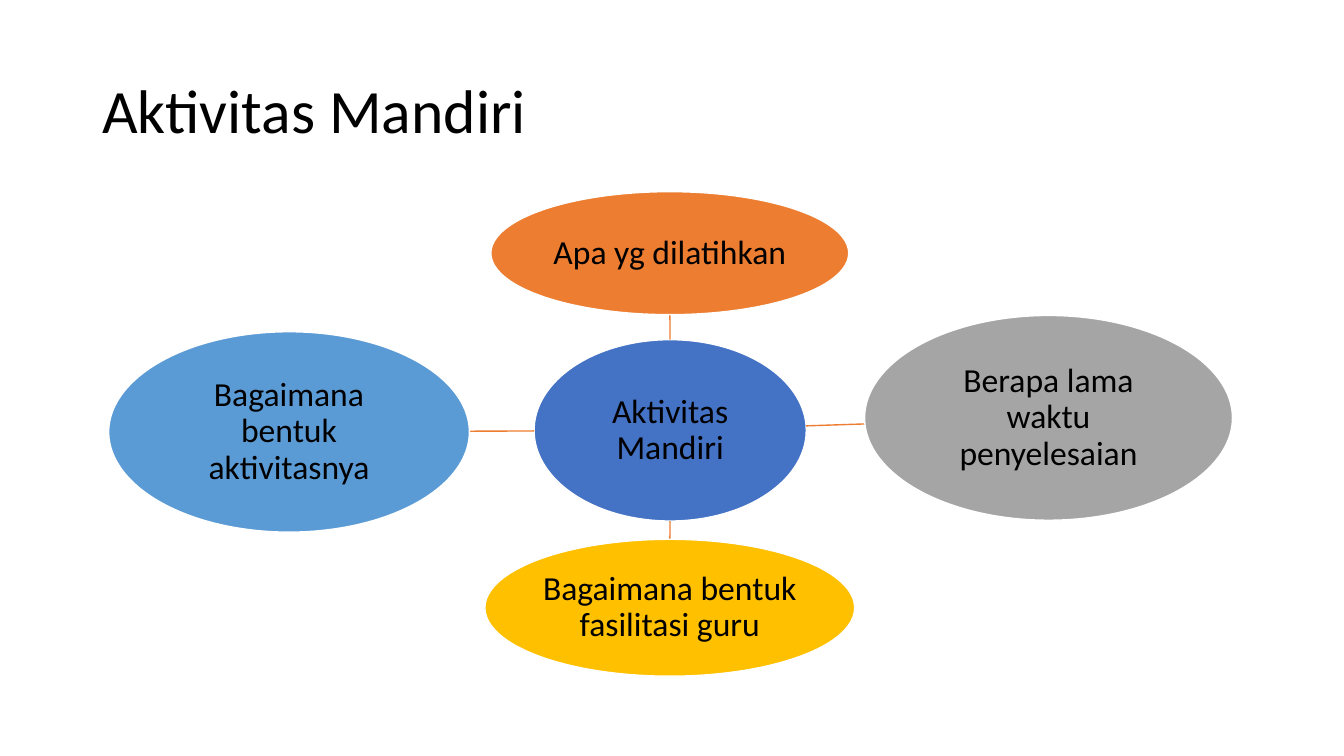
import math

import pptx
import pptx.dml.color
import pptx.enum.shapes
import pptx.enum.text
import pptx.oxml.ns
import pptx.util
from lxml import etree

Cm = pptx.util.Cm
Pt = pptx.util.Pt
ANCHOR = pptx.enum.text.MSO_ANCHOR
ALIGN = pptx.enum.text.PP_ALIGN

BLACK, WHITE, SPOKE = "000000", "FFFFFF", "ED7D31"

# Bubbles: wording, fill, (left, top, width, height) in cm
HUB = ("Aktivitas Mandiri", "4472C4", (13.46, 8.56, 6.86, 4.57))
QUESTIONS = [
    ("Apa yg dilatihkan", "ED7D31", (12.37, 4.83, 9.02, 3.1)),
    ("Berapa lama waktu penyelesaian", "A5A5A5", (21.79, 7.95, 9.27, 5.16)),
    ("Bagaimana bentuk fasilitasi guru", "FFC000", (12.22, 13.59, 9.32, 3.45)),
    ("Bagaimana bentuk aktivitasnya", "5B9BD5", (2.74, 8.36, 9.09, 5.05)),
]


def color(hex_value):
    return pptx.dml.color.RGBColor.from_string(hex_value)


def apply_format(target, values):
    for name, value in values.items():
        setattr(target, name, value)


def write_text(frame, wording, size, align, margins):
    apply_format(frame, {"word_wrap": True, "vertical_anchor": ANCHOR.MIDDLE, **margins})
    paragraph = frame.paragraphs[0]
    apply_format(paragraph, {"text": wording, "alignment": align, "line_spacing": 0.9})
    apply_format(paragraph.font, {"name": "Calibri", "size": Pt(size)})
    paragraph.font.color.rgb = color(BLACK)


def add_title(slide, wording):
    title = slide.shapes.add_textbox(Cm(2.33), Cm(1.02), Cm(29.21), Cm(3.68))
    write_text(title.text_frame, wording, 44, ALIGN.LEFT, {})


def add_bubble(slide, wording, fill, box):
    bubble = slide.shapes.add_shape(pptx.enum.shapes.MSO_SHAPE.OVAL, *map(Cm, box))
    bubble.shadow.inherit = False
    bubble.fill.solid()
    bubble.fill.fore_color.rgb = color(fill)
    bubble.line.color.rgb = color(WHITE)
    bubble.line.width = Pt(1)
    sides = ("left", "top", "right", "bottom")
    margins = {f"margin_{side}": Cm(0.04) for side in sides}
    write_text(bubble.text_frame, wording, 24, ALIGN.CENTER, margins)


def center(box):
    left, top, width, height = box
    return left + width / 2, top + height / 2


def rim_point(box, toward):
    """Point where the ellipse in box meets the ray from its center."""
    x, y = center(box)
    dx, dy = toward[0] - x, toward[1] - y
    scale = 1 / math.hypot(dx / (box[2] / 2), dy / (box[3] / 2))
    return Cm(x + dx * scale), Cm(y + dy * scale)


def add_spoke(slide, hub_box, question_box):
    start = rim_point(hub_box, center(question_box))
    end = rim_point(question_box, center(hub_box))
    spoke = slide.shapes.add_connector(
        pptx.enum.shapes.MSO_CONNECTOR.STRAIGHT, *start, *end)
    spoke.line.color.rgb = color(SPOKE)
    spoke.line.width = Pt(1)
    etree.SubElement(spoke._element.spPr, pptx.oxml.ns.qn("a:effectLst"))


def main():
    deck = pptx.Presentation()
    apply_format(deck, {"slide_width": Cm(33.87), "slide_height": Cm(19.05)})
    slide = deck.slides.add_slide(deck.slide_layouts[6])

    add_title(slide, "Aktivitas Mandiri")

    # Hub with one spoke to each question
    add_bubble(slide, *HUB)
    for question in QUESTIONS:
        add_spoke(slide, HUB[2], question[2])
        add_bubble(slide, *question)

    deck.save("out.pptx")


if __name__ == "__main__":
    main()
